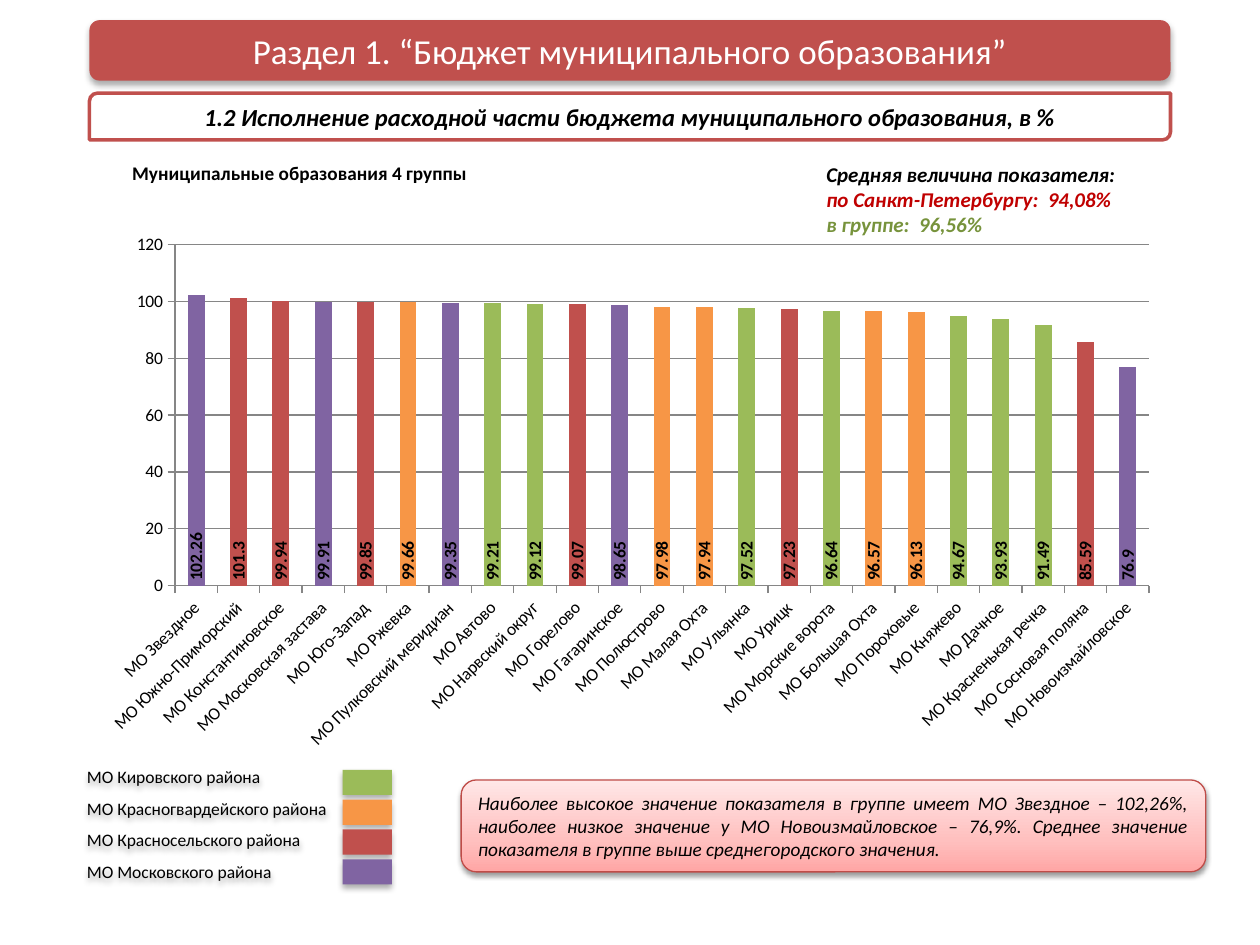
from copy import deepcopy
from lxml.etree import SubElement as Sub
from pptx import Presentation
from pptx.chart.data import CategoryChartData as Data
from pptx.dml.color import RGBColor as RGB
from pptx.enum.chart import XL_CHART_TYPE as Kind, XL_LABEL_POSITION as Spot
from pptx.enum.shapes import MSO_SHAPE as Form
from pptx.enum.text import MSO_ANCHOR as Anchor, MSO_AUTO_SIZE as Fit, PP_ALIGN as Align
from pptx.oxml.ns import qn
from pptx.util import Inches, Pt

HUES = {
    "green": "9BBB59", "orange": "F79646", "red": "C0504D", "purple": "8064A2",
    "black": "000000", "white": "FFFFFF", "crimson": "C00000", "olive": "77933C",
    "edge": "BF4C48", "gray": "868686",
    "rose": "FFA6A5", "pink": "FFC0BF", "blush": "FFE7E7",
}
INK = {name: RGB.from_string(code) for name, code in HUES.items()}


def write(shape, text, size=11, hues=("black",), bold=False, italic=False,
          align=Align.LEFT, anchor=Anchor.TOP, after=0, wrap=True):
    frame = shape.text_frame
    frame.text = text
    frame.word_wrap = wrap
    frame.auto_size = Fit.NONE
    frame.vertical_anchor = anchor
    for i, para in enumerate(frame.paragraphs):
        para.alignment = align
        para.space_before, para.space_after = Pt(0), Pt(after)
        font = para.font
        font.name, font.size, font.bold, font.italic = "Calibri", Pt(size), bold, italic
        font.color.rgb = INK[hues[i % len(hues)]]


def shade(shape, blur=3.5, dist=2.2, alpha=32):
    shape.shadow.inherit = False
    glow = Sub(shape._element.spPr.find(qn("a:effectLst")), qn("a:outerShdw"),
               blurRad=str(Pt(blur)), dist=str(Pt(dist)), dir="5400000", rotWithShape="0")
    tint = Sub(glow, qn("a:srgbClr"), val=HUES["black"])
    Sub(tint, qn("a:alpha"), val=str(alpha * 1000))


prs = Presentation()
prs.slide_width, prs.slide_height = Inches(10), Inches(7.5)
slide = prs.slides.add_slide(prs.slide_layouts[1])
shapes = slide.shapes
title, legend = slide.placeholders

sub = shapes.add_shape(Form.ROUND_2_DIAG_RECTANGLE, Inches(0.71), Inches(0.74), Inches(8.58), Inches(0.37))
sub.shadow.inherit = False
sub.fill.solid()
sub.fill.fore_color.rgb = INK["white"]
sub.line.color.rgb = INK["red"]
sub.line.width = Pt(2)
write(sub, "1.2 Исполнение расходной части бюджета муниципального образования, в %", size=14,
      bold=True, italic=True, align=Align.CENTER, anchor=Anchor.MIDDLE)

bar = shapes.add_shape(Form.ROUNDED_RECTANGLE, Inches(0.71), Inches(0.16), Inches(8.58), Inches(0.48))
bar.fill.solid()
bar.fill.fore_color.rgb = INK["red"]
bar.line.fill.background()
shade(bar)
title._element.addprevious(bar._element)
title.left, title.top, title.width, title.height = bar.left, bar.top, bar.width, bar.height
write(title, "Раздел 1. “Бюджет муниципального образования”", size=20, hues=("white",),
      align=Align.CENTER, anchor=Anchor.MIDDLE)

group = shapes.add_textbox(Inches(0.95), Inches(1.23), Inches(2.95), Inches(0.29))
write(group, "Муниципальные образования 4 группы", bold=True)

mean = shapes.add_textbox(Inches(6.46), Inches(1.23), Inches(2.6), Inches(0.71))
write(mean, "Средняя величина показателя:\nпо Санкт-Петербургу:  94,08%\nв группе:  96,56%", size=12,
      hues=("black", "crimson", "olive"), bold=True, italic=True, wrap=False)

areas = {
    "МО Кировского района": "green",
    "МО Красногвардейского района": "orange",
    "МО Красносельского района": "red",
    "МО Московского района": "purple",
}
legend.left, legend.top, legend.width, legend.height = Inches(0.59), Inches(6.03), Inches(2.84), Inches(1.03)
shade(legend)
write(legend, "\n".join(areas), size=10, after=6)
for para in legend.text_frame.paragraphs:
    props = para._p.get_or_add_pPr()
    props.set("marL", "0")
    props.set("indent", "0")
    Sub(props, qn("a:buNone"))
    rest = props.find(qn("a:defRPr"))
    if rest is not None:
        props.append(rest)

for i, hue in enumerate(areas.values()):
    key = shapes.add_shape(Form.RECTANGLE, Inches(2.72), Inches(6.11 + 0.71 / 3 * i), Inches(0.39), Inches(0.2))
    key.fill.solid()
    key.fill.fore_color.rgb = INK[hue]
    key.line.fill.background()
    shade(key)

note = shapes.add_shape(Form.ROUNDED_RECTANGLE, Inches(3.66), Inches(6.19), Inches(5.91), Inches(0.73))
note.fill.gradient()
note.fill.gradient_angle = 90
stops = note._element.spPr.find(qn("a:gradFill")).find(qn("a:gsLst"))
stops.insert(1, deepcopy(stops[0]))
for stop, hue, place in zip(note.fill.gradient_stops, ("rose", "pink", "blush"), (0, 0.35, 1)):
    stop.color.rgb = INK[hue]
    stop.position = place
note.line.color.rgb = INK["edge"]
note.line.width = Pt(0.75)
shade(note, blur=3.1, dist=1.6, alpha=38)
write(note, "Наиболее высокое значение показателя в группе имеет МО Звездное – 102,26%, "
      "наиболее низкое значение у МО Новоизмайловское – 76,9%. "
      "Среднее значение показателя в группе выше среднегородского значения.",
      italic=True, align=Align.JUSTIFY, anchor=Anchor.MIDDLE)

rows = [
    ("Звездное", 102.26, "purple"), ("Южно-Приморский", 101.3, "red"),
    ("Константиновское", 99.94, "red"), ("Московская застава", 99.91, "purple"),
    ("Юго-Запад", 99.85, "red"), ("Ржевка", 99.66, "orange"),
    ("Пулковский меридиан", 99.35, "purple"), ("Автово", 99.21, "green"),
    ("Нарвский округ", 99.12, "green"), ("Горелово", 99.07, "red"),
    ("Гагаринское", 98.65, "purple"), ("Полюстрово", 97.98, "orange"),
    ("Малая Охта", 97.94, "orange"), ("Ульянка", 97.52, "green"),
    ("Урицк", 97.23, "red"), ("Морские ворота", 96.64, "green"),
    ("Большая Охта", 96.57, "orange"), ("Пороховые", 96.13, "orange"),
    ("Княжево", 94.67, "green"), ("Дачное", 93.93, "green"),
    ("Красненькая речка", 91.49, "green"), ("Сосновая поляна", 85.59, "red"),
    ("Новоизмайловское", 76.9, "purple"),
]
data = Data()
data.categories = ["МО " + name for name, _, _ in rows]
data.add_series("Series 1", [value for _, value, _ in rows])
left, top, wide, high = 0.71, 1.78, 8.58, 4.25
chart = shapes.add_chart(Kind.COLUMN_CLUSTERED, Inches(left), Inches(top), Inches(wide), Inches(high), data).chart
chart.has_title = chart.has_legend = False
chart.font.name, chart.font.size = "Calibri", Pt(10)
chart.font.color.rgb = INK["black"]

plot = chart.plots[0]
plot.gap_width = 150
plot.vary_by_categories = False
series = plot.series[0]
series.format.fill.solid()
series.format.fill.fore_color.rgb = INK["green"]
for i, (_, _, hue) in enumerate(rows):
    if hue != "green":
        fill = series.points[i].format.fill
        fill.solid()
        fill.fore_color.rgb = INK[hue]

plot.has_data_labels = True
tags = plot.data_labels
tags.show_value = True
tags.position = Spot.INSIDE_BASE
tags.font.name, tags.font.size, tags.font.bold = "Calibri", Pt(10), True
tags.font.color.rgb = INK["black"]

cats, vals = chart.category_axis, chart.value_axis
vals.minimum_scale, vals.maximum_scale, vals.major_unit = 0, 120, 20
vals.has_major_gridlines = True
for part in (cats, vals, vals.major_gridlines):
    part.format.line.color.rgb = INK["gray"]
    part.format.line.width = Pt(0.75)
cats.tick_labels.font.size = Pt(10)

for part, angle in ((tags._element, -90), (cats._element, -45)):
    body = part.find(qn("c:txPr")).find(qn("a:bodyPr"))
    body.set("rot", str(angle * 60000))
    body.set("vert", "horz")

area = chart._chartSpace.chart.plotArea
for old in area.findall(qn("c:layout")):
    area.remove(old)
frame = Sub(area, qn("c:layout"))
area.insert(0, frame)
grid = Sub(frame, qn("c:manualLayout"))
for tag, value in (("layoutTarget", "inner"), ("xMode", "edge"), ("yMode", "edge"),
                   ("x", (1.39 - left) / wide), ("y", (1.94 - top) / high),
                   ("w", 7.73 / wide), ("h", 2.71 / high)):
    Sub(grid, qn("c:" + tag), val=str(value))

prs.save("out.pptx")
